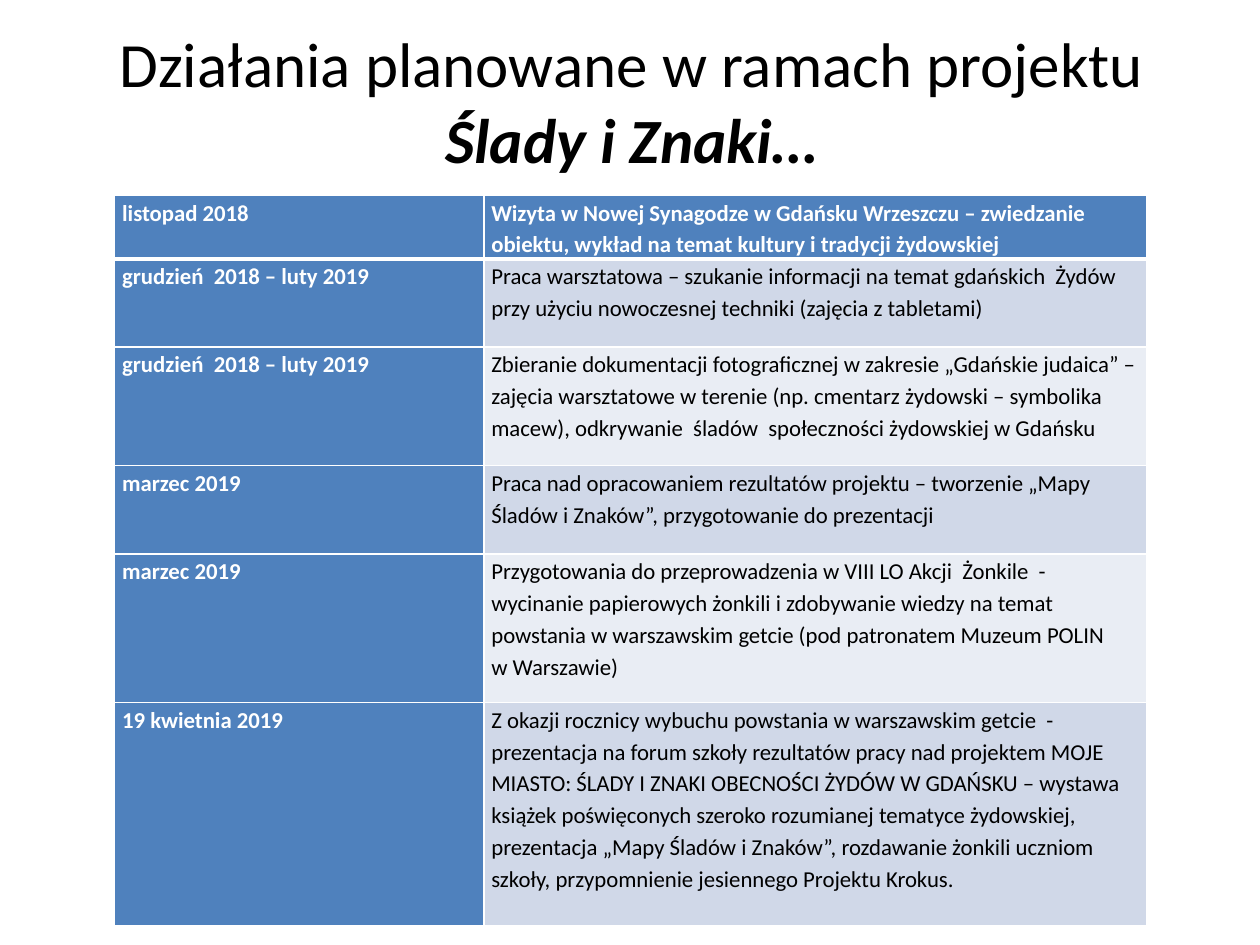
from lxml import etree
from pptx import Presentation
from pptx import util as u
from pptx.dml.color import RGBColor
from pptx.enum import text
from pptx.oxml.ns import qn


def add_run(p, words, size, color="000000", bold=False, italic=False):
    r = p.add_run()
    r.text = words
    r.font.name = "Calibri"
    r.font.size = u.Pt(size)
    r.font.bold = bold
    r.font.italic = italic
    r.font.color.rgb = RGBColor.from_string(color)


def set_border(cell, side, width, color="FFFFFF"):
    ln = etree.SubElement(cell._tc.get_or_add_tcPr(), qn(f"a:ln{side}"), w=str(u.Pt(width)))
    fill = etree.SubElement(ln, qn("a:solidFill"))
    etree.SubElement(fill, qn("a:srgbClr"), val=color)


BLUE, BANDS = "4F81BD", ["E9EDF4", "D0D8E8"]

# Row height, date, paragraphs of the activity
schedule = [
    (0.5, "listopad 2018",
     ["Wizyta w Nowej Synagodze w Gdańsku Wrzeszczu – zwiedzanie obiektu, "
      "wykład na temat kultury i tradycji żydowskiej"]),
    (0.7, "grudzień  2018 – luty 2019",
     ["Praca warsztatowa – szukanie informacji na temat gdańskich  Żydów "
      "przy użyciu nowoczesnej techniki (zajęcia z tabletami)"]),
    (0.94, "grudzień  2018 – luty 2019",
     ["Zbieranie dokumentacji fotograficznej w zakresie „Gdańskie judaica” – "
      "zajęcia warsztatowe w terenie (np. cmentarz żydowski – symbolika macew), "
      "odkrywanie  śladów  społeczności żydowskiej w Gdańsku"]),
    (0.7, "marzec 2019",
     ["Praca nad opracowaniem rezultatów projektu – tworzenie „Mapy Śladów i Znaków”, "
      "przygotowanie do prezentacji"]),
    (1.18, "marzec 2019",
     ["Przygotowania do przeprowadzenia w VIII LO Akcji  Żonkile  - wycinanie papierowych "
      "żonkili i zdobywanie wiedzy na temat powstania w warszawskim getcie "
      "(pod patronatem Muzeum POLIN",
      "w Warszawie)"]),
    (1.77, "19 kwietnia 2019",
     ["Z okazji rocznicy wybuchu powstania w warszawskim getcie  - prezentacja na forum "
      "szkoły rezultatów pracy nad projektem MOJE MIASTO: ŚLADY I ZNAKI OBECNOŚCI ŻYDÓW "
      "W GDAŃSKU – wystawa książek poświęconych szeroko rozumianej tematyce żydowskiej, "
      "prezentacja „Mapy Śladów i Znaków”, rozdawanie żonkili uczniom szkoły, "
      "przypomnienie jesiennego Projektu Krokus."]),
]

prs = Presentation()
prs.slide_width, prs.slide_height = u.Inches(10), u.Inches(7.5)
s = prs.slides.add_slide(prs.slide_layouts[5])

# Title
title = s.shapes.title
title.left, title.top = u.Inches(0.51), u.Inches(0.36)
title.width, title.height = u.Inches(9), u.Inches(0.87)
tf = title.text_frame
tf.vertical_anchor = text.MSO_ANCHOR.MIDDLE
tf.auto_size = text.MSO_AUTO_SIZE.NONE
p = tf.paragraphs[0]
p.alignment = text.PP_ALIGN.CENTER
add_run(p, "Działania planowane w ramach projektu ", 36)
add_run(p, "Ślady i Znaki…", 36, bold=True, italic=True)

# Schedule table
height = sum(row[0] for row in schedule)
table = s.shapes.add_table(len(schedule), 2, u.Inches(0.91), u.Inches(1.55),
                           u.Inches(8.19), u.Inches(height)).table
table.first_col = True
for column, width in zip(table.columns, (2.93, 5.26)):
    column.width = u.Inches(width)

for i, (row_height, date, activity) in enumerate(schedule):
    table.rows[i].height = u.Inches(row_height)
    for j, paragraphs in enumerate(([date], activity)):
        cell = table.cell(i, j)
        heading = i == 0 or j == 0
        cell.margin_left = cell.margin_right = u.Inches(0.06)
        cell.margin_top = cell.margin_bottom = 0

        # Borders come before the fill; a thick line closes the first row
        for side in "LRTB":
            thick = (i, side) in ((0, "B"), (1, "T"))
            set_border(cell, side, 3 if thick else 1)
        cell.fill.solid()
        cell.fill.fore_color.rgb = RGBColor.from_string(BLUE if heading else BANDS[i % 2])

        for k, words in enumerate(paragraphs):
            p = cell.text_frame.paragraphs[0] if k == 0 else cell.text_frame.add_paragraph()
            p.line_spacing = 1.15
            add_run(p, words, 13, "FFFFFF" if heading else "000000", bold=heading)

prs.save("out.pptx")
